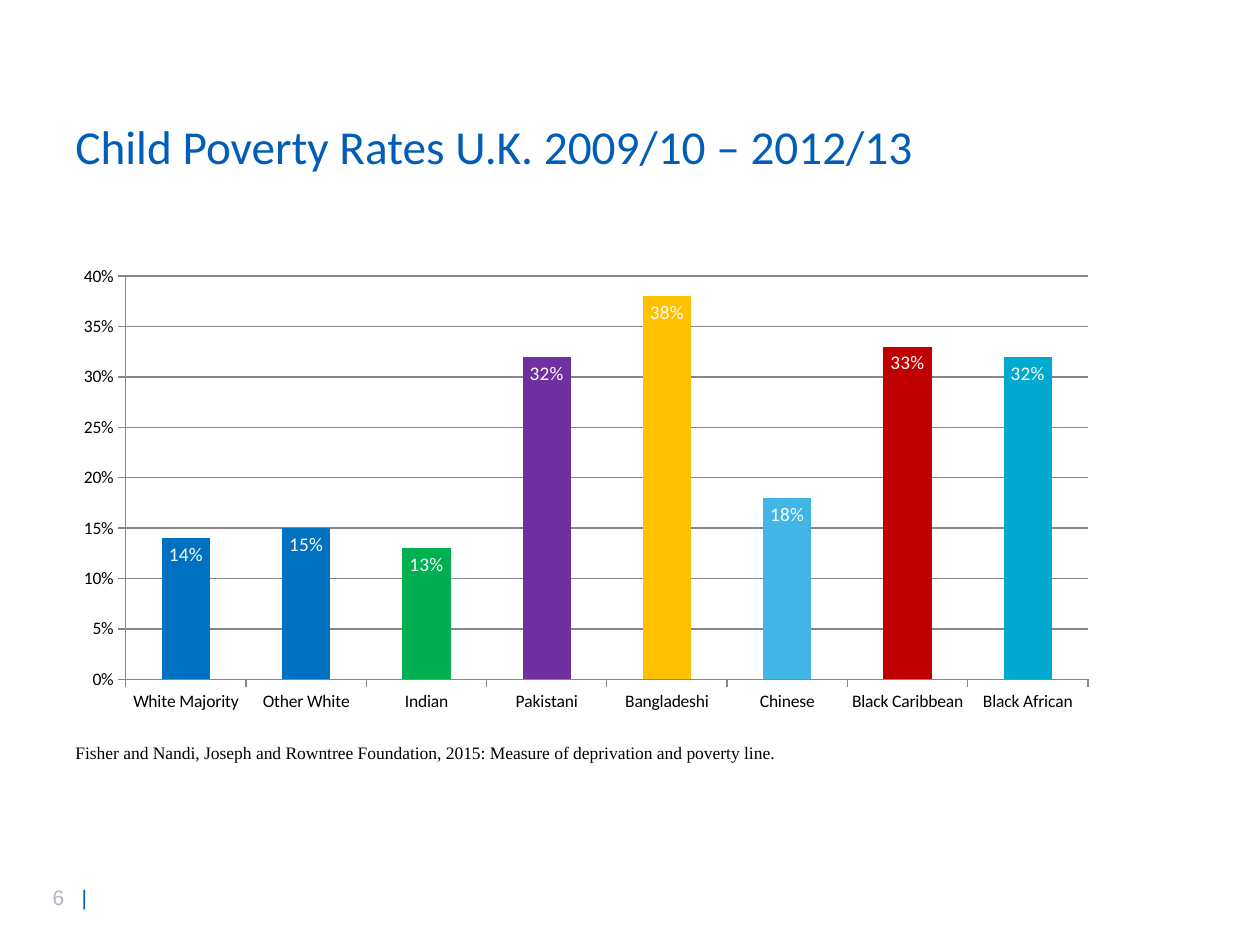
from lxml.etree import SubElement
from pptx import Presentation
from pptx.chart.data import CategoryChartData
from pptx.dml.color import RGBColor
from pptx.enum.chart import XL_CHART_TYPE as ChartType
from pptx.enum.chart import XL_LABEL_POSITION as LabelPosition
from pptx.enum.chart import XL_TICK_MARK as TickMark
from pptx.oxml.ns import qn
from pptx.util import Inches, Pt

BLACK = RGBColor(0x00, 0x00, 0x00)
WHITE = RGBColor(0xFF, 0xFF, 0xFF)
BRAND_BLUE = RGBColor(0x00, 0x5E, 0xB8)
PAGE_GREY = RGBColor(0xAD, 0xB6, 0xBE)
LINE_GREY = RGBColor(0x86, 0x86, 0x86)
BLUE = RGBColor(0x00, 0x70, 0xC0)
GREEN = RGBColor(0x00, 0xB0, 0x50)
PURPLE = RGBColor(0x70, 0x30, 0xA0)
AMBER = RGBColor(0xFF, 0xC0, 0x00)
SKY = RGBColor(0x41, 0xB6, 0xE6)
RED = RGBColor(0xC0, 0x00, 0x00)
AQUA = RGBColor(0x00, 0xA9, 0xCE)

# Content
TITLE = "Child Poverty Rates U.K. 2009/10 – 2012/13"
CITATION = ("Fisher and Nandi, Joseph and Rowntree Foundation, 2015: "
            "Measure of deprivation and poverty line.")
PAGE_NUMBER = "6"
POVERTY_RATES = [
    ("White Majority", 0.14, BLUE),
    ("Other White", 0.15, BLUE),
    ("Indian", 0.13, GREEN),
    ("Pakistani", 0.32, PURPLE),
    ("Bangladeshi", 0.38, AMBER),
    ("Chinese", 0.18, SKY),
    ("Black Caribbean", 0.33, RED),
    ("Black African", 0.32, AQUA),
]
LEFT = 0.5


def add_text(slide, box, text, font_name, size, color):
    frame = slide.shapes.add_textbox(*map(Inches, box)).text_frame
    frame.word_wrap = True
    line = frame.paragraphs[0]
    line.text = text
    line.font.name = font_name
    line.font.size = Pt(size)
    line.font.color.rgb = color
    return line


def add_page_number(slide):
    number = add_text(slide, (0.32, 6.97, 0.71, 0.3), PAGE_NUMBER,
                      "Arial", 12, PAGE_GREY)
    # A tab stop sets the gap before the divider
    tabs = SubElement(number._p.get_or_add_pPr(), qn("a:tabLst"))
    number._p.pPr.insert(0, tabs)
    SubElement(tabs, qn("a:tab"), pos=str(Inches(0.23)), algn="l")
    divider = number.add_run()
    divider.text = "\t|"
    divider.font.color.rgb = BRAND_BLUE
    for run in number.runs:
        run.font.name = "Arial"
        run.font.size = Pt(12)
    number.runs[0].font.color.rgb = PAGE_GREY


def add_rates_chart(slide):
    data = CategoryChartData(number_format="0%")
    data.categories = [group for group, _, _ in POVERTY_RATES]
    data.add_series("Series 1", [rate for _, rate, _ in POVERTY_RATES])
    box = map(Inches, (LEFT, 2.04, 8.3, 3.68))
    chart = slide.shapes.add_chart(ChartType.COLUMN_CLUSTERED, *box, data).chart
    chart.has_legend = False
    chart.has_title = False
    chart.font.name = "Calibri"
    chart.font.size = Pt(10)
    chart.font.color.rgb = BLACK

    # Axes
    rate_axis = chart.value_axis
    for axis in (chart.category_axis, rate_axis):
        axis.major_tick_mark = TickMark.OUTSIDE
        axis.minor_tick_mark = TickMark.NONE
        axis.format.line.color.rgb = LINE_GREY
    rate_axis.minimum_scale = 0
    rate_axis.maximum_scale = 0.4
    rate_axis.major_unit = 0.05
    rate_axis.tick_labels.number_format = "0%"
    rate_axis.tick_labels.number_format_is_linked = False
    rate_axis.major_gridlines.format.line.color.rgb = LINE_GREY

    # Columns
    plot = chart.plots[0]
    plot.gap_width = 150
    plot.vary_by_categories = False
    rates = plot.series[0]
    rates.format.fill.solid()
    rates.format.fill.fore_color.rgb = BRAND_BLUE
    for index, (_, _, color) in enumerate(POVERTY_RATES):
        fill = rates.points[index].format.fill
        fill.solid()
        fill.fore_color.rgb = color

    # Rate labels
    labels = rates.data_labels
    labels.show_value = True
    labels.position = LabelPosition.INSIDE_END
    labels.number_format = "0%"
    labels.number_format_is_linked = False
    labels.font.size = Pt(11)
    labels.font.color.rgb = WHITE


def main():
    deck = Presentation()
    deck.slide_width, deck.slide_height = Inches(10), Inches(7.5)
    slide = deck.slides.add_slide(deck.slide_layouts[6])

    add_page_number(slide)
    title = add_text(slide, (LEFT, 0.93, 7.18, 0.67), TITLE,
                     "Calibri", 27, BRAND_BLUE)
    title.line_spacing = 0.9
    add_text(slide, (LEFT, 5.84, 7.62, 0.27), CITATION,
             "Times New Roman", 10, BLACK)
    add_rates_chart(slide)
    deck.save("out.pptx")


if __name__ == "__main__":
    main()
